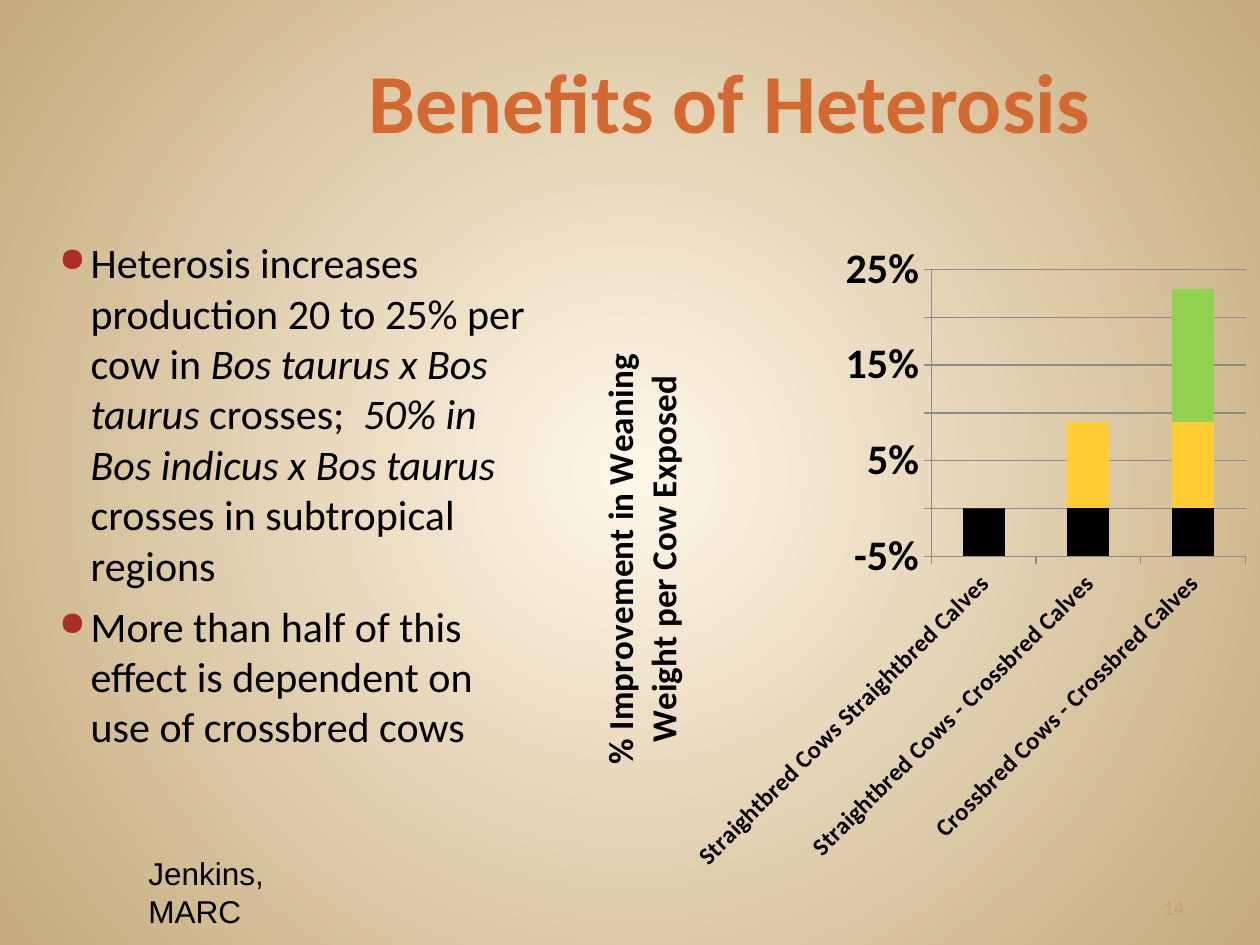
from dataclasses import dataclass

from lxml import etree
from pptx import Presentation
from pptx import util as u
from pptx.chart.data import CategoryChartData
from pptx.dml.color import RGBColor
from pptx.enum import chart as charts
from pptx.enum import text
from pptx.oxml import parse_xml
from pptx.oxml.ns import nsdecls, qn


@dataclass(frozen=True)
class Theme:
    font: str = "Calibri"
    source_font: str = "Arial"
    glow: str = "FFF7E8"
    edge: str = "C4AA7A"
    title: str = "D36830"
    ink: str = "000000"
    bullet: str = "AD2E27"
    number: str = "C0A470"
    grid: str = "8B8B8B"
    series: tuple = ("000000", "FFCC33", "92D050")
    title_size: int = 48
    body_size: int = 24
    source_size: int = 18
    number_size: int = 12
    axis_title_size: int = 20
    value_size: int = 24
    category_size: int = 14


def color(value):
    return RGBColor.from_string(value)


def set_font(font, size, value, name, bold=False):
    font.size, font.name, font.bold = u.Pt(size), name, bold
    font.color.rgb = color(value)


def layout_xml(x, y, w=None, h=None):
    """Manual chart layout in fractions of the chart area."""
    target = '<c:layoutTarget val="inner"/>' if w else ""
    size = f'<c:w val="{w}"/><c:h val="{h}"/>' if w else ""
    return parse_xml(
        f'<c:layout {nsdecls("c")}><c:manualLayout>{target}'
        '<c:xMode val="edge"/><c:yMode val="edge"/>'
        f'<c:x val="{x}"/><c:y val="{y}"/>{size}</c:manualLayout></c:layout>')


class SlideBuilder:
    def __init__(self, slide, theme):
        self.slide, self.theme = slide, theme

    def background(self):
        fill = self.slide.background.fill
        fill.gradient()
        for stop, value in zip(fill.gradient_stops, (self.theme.glow, self.theme.edge)):
            stop.color.rgb = color(value)
        # A circular gradient replaces the default linear one
        gradient = self.slide.element.find(".//" + qn("a:gradFill"))
        gradient.remove(gradient.find(qn("a:lin")))
        circle = etree.SubElement(gradient, qn("a:path"), path="circle")
        etree.SubElement(circle, qn("a:fillToRect"), l="50000", t="50000", r="50000", b="50000")

    def frame(self, box):
        frame = self.slide.shapes.add_textbox(*map(u.Inches, box)).text_frame
        frame.word_wrap = True
        return frame

    def label(self, box, words, size, value, font=None, bold=False,
              align=text.PP_ALIGN.LEFT, anchor=text.MSO_ANCHOR.TOP):
        frame = self.frame(box)
        frame.vertical_anchor = anchor
        paragraph = frame.paragraphs[0]
        paragraph.text, paragraph.alignment = words, align
        set_font(paragraph.font, size, value, font or self.theme.font, bold)

    def bullets(self, box, items):
        """Each item is a list of runs that alternate upright and italic."""
        frame = self.frame(box)
        frame.margin_left = frame.margin_right = u.Inches(0.05)
        for index, runs in enumerate(items):
            paragraph = frame.add_paragraph() if index else frame.paragraphs[0]
            paragraph.space_after = u.Pt(6)
            set_font(paragraph.font, self.theme.body_size, self.theme.ink, self.theme.font)
            for position, words in enumerate(runs):
                run = paragraph.add_run()
                run.text, run.font.italic = words, position % 2 == 1
            self.bullet_mark(paragraph)

    def bullet_mark(self, paragraph):
        properties = paragraph._p.get_or_add_pPr()
        indent = u.Inches(0.25)
        properties.set("marL", str(indent))
        properties.set("indent", str(-indent))
        marks = [f'<a:buClr {nsdecls("a")}><a:srgbClr val="{self.theme.bullet}"/></a:buClr>',
                 f'<a:buSzPct {nsdecls("a")} val="80000"/>',
                 f'<a:buChar {nsdecls("a")} char="●"/>']
        before = properties.find(qn("a:defRPr"))
        for mark in marks:
            before.addprevious(parse_xml(mark))

    def stacked_chart(self, box, categories, series, axis_title):
        theme = self.theme
        data = CategoryChartData(number_format="0%")
        data.categories = categories
        for name, values in series:
            data.add_series(name, values)
        chart = self.slide.shapes.add_chart(
            charts.XL_CHART_TYPE.COLUMN_STACKED, *map(u.Inches, box), data).chart
        chart.has_legend = chart.has_title = False
        set_font(chart.font, 10, theme.ink, theme.font)

        # Columns
        plot = chart.plots[0]
        plot.gap_width, plot.overlap, plot.vary_by_categories = 150, 100, False
        for column, value in zip(plot.series, theme.series):
            column.invert_if_negative = False
            column.format.fill.solid()
            column.format.fill.fore_color.rgb = color(value)

        # Axes
        category_axis, value_axis = chart.category_axis, chart.value_axis
        for axis, size in ((category_axis, theme.category_size), (value_axis, theme.value_size)):
            axis.major_tick_mark = charts.XL_TICK_MARK.OUTSIDE
            axis.tick_label_position = charts.XL_TICK_LABEL_POSITION.LOW
            set_font(axis.tick_labels.font, size, theme.ink, theme.font, True)
            self.thin_line(axis.format.line)
        category_axis._element.find(qn("c:txPr")).find(qn("a:bodyPr")).set("rot", "-2700000")
        value_axis.minimum_scale, value_axis.maximum_scale = -0.05, 0.25
        value_axis.major_unit = 0.05
        value_axis.crosses = charts.XL_AXIS_CROSSES.MINIMUM
        value_axis.tick_labels.number_format = "0%"
        value_axis.tick_labels.number_format_is_linked = False
        value_axis.has_major_gridlines = True
        self.thin_line(value_axis.major_gridlines.format.line)

        # Axis title and plot position
        frame = value_axis.axis_title.text_frame
        frame.text = axis_title
        set_font(frame.paragraphs[0].font, theme.axis_title_size, theme.ink, theme.font, True)
        frame._txBody.find(qn("a:bodyPr")).set("rot", "-5400000")
        frame._txBody.find(qn("a:bodyPr")).set("vert", "horz")
        self.place(value_axis.axis_title._element, layout_xml(0.06, 0.18), "c:tx")
        plot_area = chart._chartSpace.find(".//" + qn("c:plotArea"))
        self.place(plot_area, layout_xml(0.54, 0.06, 0.44, 0.44))

    def thin_line(self, line):
        line.width = u.Pt(0.75)
        line.color.rgb = color(self.theme.grid)

    def place(self, parent, layout, after=None):
        for old in parent.findall(qn("c:layout")):
            parent.remove(old)
        if after:
            parent.find(qn(after)).addnext(layout)
        else:
            parent.insert(0, layout)


def main():
    presentation = Presentation()
    presentation.slide_width, presentation.slide_height = u.Inches(10), u.Inches(7.5)
    theme = Theme()
    builder = SlideBuilder(presentation.slides.add_slide(presentation.slide_layouts[6]), theme)
    builder.background()

    # Source and title
    builder.label((1.08, 6.73, 1.82, 0.4), "Jenkins, MARC",
                  theme.source_size, theme.ink, theme.source_font)
    builder.label((2, 0.17, 7.58, 1.25), "Benefits of Heterosis", theme.title_size, theme.title,
                  bold=True, align=text.PP_ALIGN.CENTER, anchor=text.MSO_ANCHOR.MIDDLE)

    # Body text
    builder.bullets((0.42, 1.83, 3.83, 5.17), [
        ["Heterosis increases production 20 to 25% per cow in ", "Bos taurus x Bos taurus ",
         "crosses; ", " 50% in Bos indicus x Bos taurus ", "crosses in subtropical regions"],
        ["More than half of this effect is dependent on use of crossbred cows"],
    ])

    # Weaning weight chart
    builder.stacked_chart(
        (4.33, 1.83, 5.67, 5.17),
        ["Straightbred Cows Straightbred Calves", "Straightbred Cows - Crossbred Calves",
         "Crossbred Cows - Crossbred Calves"],
        [("Series 1", (-0.05, -0.05, -0.05)), ("Series 2", (0, 0.09, 0.09)),
         ("Series 3", (0, 0, 0.14))],
        "% Improvement in Weaning Weight per Cow Exposed")

    # Slide number
    builder.label((8.5, 7, 1, 0.4), "14", theme.number_size, theme.number,
                  align=text.PP_ALIGN.RIGHT, anchor=text.MSO_ANCHOR.MIDDLE)
    presentation.save("out.pptx")


if __name__ == "__main__":
    main()
